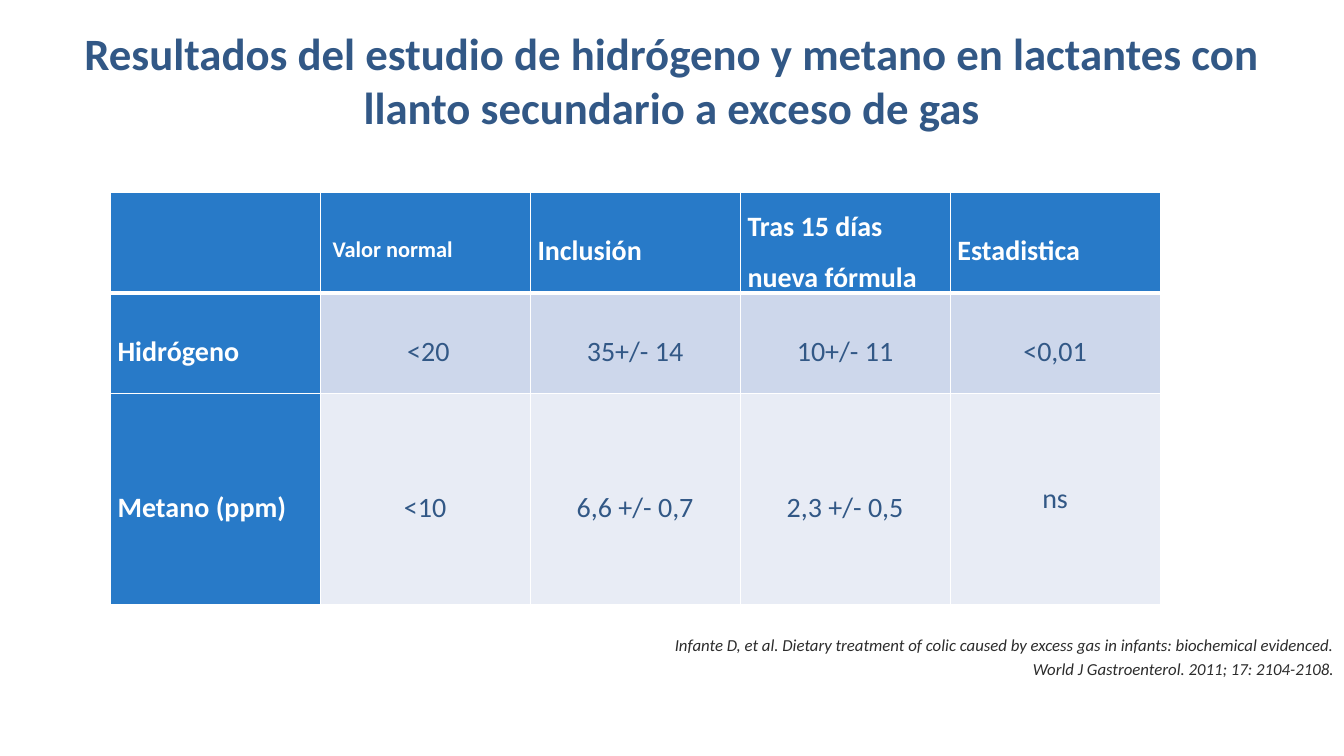
from lxml.etree import SubElement
from pptx import Presentation
from pptx.dml.color import RGBColor as RGB
from pptx.enum.text import MSO_ANCHOR as Anchor, MSO_AUTO_SIZE as AutoSize, PP_ALIGN as Align
from pptx.oxml.ns import qn
from pptx.util import Emu, Pt

PX = 9525
COLORS = {"navy": "325886", "blue": "287AC8", "band": "CDD7EB", "pale": "E8ECF5",
          "white": "FFFFFF", "ink": "2C2C2C"}
ROWS = [["", " Valor normal", "Inclusión", "Tras 15 días\nnueva fórmula", "Estadistica"],
        ["Hidrógeno", " <20", "35+/- 14", "10+/- 11", "<0,01"],
        ["Metano (ppm)", "<10", "6,6 +/- 0,7", "2,3 +/- 0,5", "ns"]]
ROW_HEIGHTS = [96, 96, 201]
COL_WIDTH = 200


def px(n):
    return Emu(n * PX)


class SlideBuilder:
    """Holds the style and the current slide, and adds elements to it."""

    def __init__(self, prs, font="Calibri"):
        self.font = font
        self.slide = prs.slides.add_slide(prs.slide_layouts[5])

    def format(self, p, size, color, align, bold=False, italic=False):
        p.alignment = align
        for r in p.runs:
            f = r.font
            f.name, f.size, f.bold, f.italic = self.font, Pt(size), bold, italic
            f.color.rgb = RGB.from_string(COLORS[color])

    def title(self, text, x, y, w, h):
        sp = self.slide.shapes.title
        sp.left, sp.top, sp.width, sp.height = map(px, (x, y, w, h))
        tf = sp.text_frame
        tf.text = text
        tf.word_wrap, tf.auto_size = True, AutoSize.NONE
        tf.vertical_anchor = Anchor.MIDDLE
        self.format(tf.paragraphs[0], 32, "navy", Align.CENTER, bold=True)

    def citation(self, text, x, y, w, h):
        tf = self.slide.shapes.add_textbox(*map(px, (x, y, w, h))).text_frame
        tf.word_wrap = True
        tf.text = text
        for i, p in enumerate(tf.paragraphs):
            self.format(p, 12, "ink", Align.RIGHT, italic=True)
            if i:
                p.space_before = Pt(2.4)

    def borders(self, cell, **widths):
        tc_pr = cell._tc.get_or_add_tcPr()
        for side in "LRTB":
            ln = SubElement(tc_pr, qn(f"a:ln{side}"), w=str(Pt(widths.get(side, 1))))
            fill = SubElement(ln, qn("a:solidFill"))
            SubElement(fill, qn("a:srgbClr"), val=COLORS["white"])

    def cell(self, cell, text, row, col):
        heading = row == 0 or col == 0
        self.borders(cell, T=3 if row == 1 else 1, B=3 if row == 0 else 1)
        cell.fill.solid()
        fill = "blue" if heading else ("band", "pale")[row - 1]
        cell.fill.fore_color.rgb = RGB.from_string(COLORS[fill])
        cell.vertical_anchor = Anchor.MIDDLE
        cell.margin_left = cell.margin_right = px(7)
        cell.margin_top = cell.margin_bottom = 0
        cell.text_frame.text = text
        for p in cell.text_frame.paragraphs:
            size = 16 if (row, col) == (0, 1) else 20
            self.format(p, size, "white" if heading else "navy",
                        Align.JUSTIFY if heading else Align.CENTER, bold=heading)
            if text != "ns":
                p.line_spacing = 1.5

    def table(self, rows, x, y, col_width, row_heights):
        cols = len(rows[0])
        table = self.slide.shapes.add_table(
            len(rows), cols, px(x), px(y), px(cols * col_width), px(sum(row_heights))).table
        for col in table.columns:
            col.width = px(col_width)
        for i, (texts, height) in enumerate(zip(rows, row_heights)):
            table.rows[i].height = px(height)
            for j, text in enumerate(texts):
                self.cell(table.cell(i, j), text, i, j)


def main():
    prs = Presentation()
    prs.slide_width, prs.slide_height = px(1280), px(720)
    s = SlideBuilder(prs)
    s.title("Resultados del estudio de hidrógeno y metano en lactantes con "
            "llanto secundario a exceso de gas", 64, 16, 1152, 120)
    s.citation("Infante D, et al. Dietary treatment of colic caused by excess gas in infants: "
               "biochemical evidenced.\nWorld J Gastroenterol. 2011; 17: 2104-2108.",
               64, 600, 1216, 50)
    s.table(ROWS, 105, 183, COL_WIDTH, ROW_HEIGHTS)
    prs.save("out.pptx")


if __name__ == "__main__":
    main()
